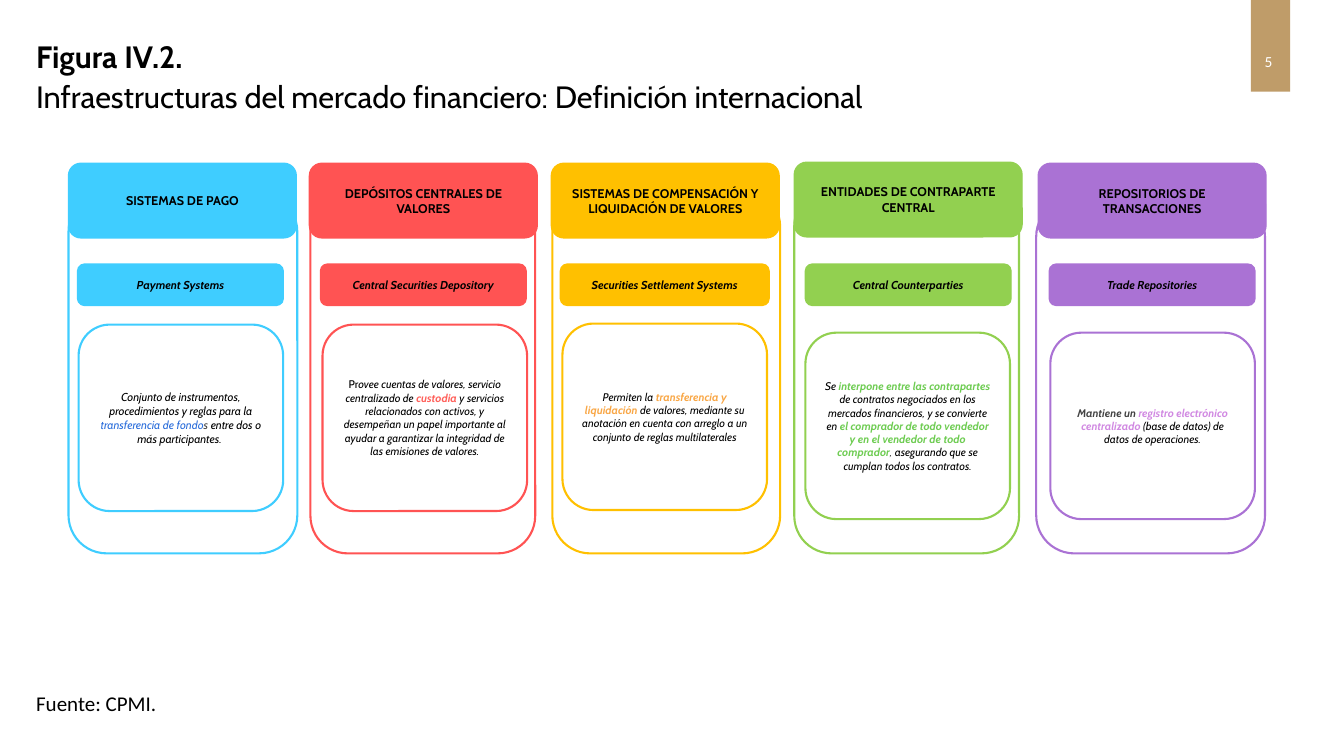
from pptx import Presentation
from pptx.dml.color import RGBColor
from pptx.enum.shapes import MSO_SHAPE
from pptx.enum.text import MSO_ANCHOR, PP_ALIGN
from pptx.util import Inches, Pt

RECT, ROUND = MSO_SHAPE.RECTANGLE, MSO_SHAPE.ROUNDED_RECTANGLE
TOP, MIDDLE = MSO_ANCHOR.TOP, MSO_ANCHOR.MIDDLE
LEFT, CENTER = PP_ALIGN.LEFT, PP_ALIGN.CENTER

BLACK = RGBColor(0x00, 0x00, 0x00)
WHITE = RGBColor(0xFF, 0xFF, 0xFF)
GRAY = RGBColor(0x43, 0x43, 0x43)
GOLD = RGBColor(0xBF, 0x9C, 0x69)
SKY = RGBColor(0x3F, 0xCD, 0xFF)
RED = RGBColor(0xFF, 0x53, 0x53)
AMBER = RGBColor(0xFF, 0xC0, 0x00)
GREEN = RGBColor(0x92, 0xD0, 0x50)
PURPLE = RGBColor(0xAA, 0x72, 0xD4)
# Accents inside the definitions
BLUE = RGBColor(0x2A, 0x6D, 0xDB)
CORAL = RGBColor(0xFF, 0x5F, 0x59)
ORANGE = RGBColor(0xF9, 0xA7, 0x46)
LEAF = RGBColor(0x6E, 0xCC, 0x52)
LILAC = RGBColor(0xD1, 0x89, 0xE2)

# The grid has square cells; one column of the figure spans PITCH cells
CELL = 0.1
WIDE, HIGH = 133.33, 75
START, PITCH = 6.8, 24


class Board:
    """Style and current slide; every box is (column, row, columns, rows)."""

    def __init__(self, deck, head="Cabin", body="Calibri"):
        self.head, self.body = head, body
        self.slide = deck.slides.add_slide(deck.slide_layouts[6])

    def place(self, box):
        return [Inches(cells * CELL) for cells in box]

    def shape(self, kind, box, fill, line=None, width=1):
        item = self.slide.shapes.add_shape(kind, *self.place(box))
        item.shadow.inherit = False
        item.fill.solid()
        item.fill.fore_color.rgb = fill
        if line is None:
            item.line.fill.background()
        else:
            item.line.color.rgb = line
            item.line.width = Pt(width)
        return item

    def text(self, box):
        return self.slide.shapes.add_textbox(*self.place(box))

    def put(self, item, runs, size, font, align=CENTER, anchor=MIDDLE,
            color=BLACK, bold=None, italic=None, more=False):
        """Fill a paragraph; each run is (text, color, bold, italic)."""
        frame = item.text_frame
        frame.word_wrap = True
        frame.vertical_anchor = anchor
        par = frame.add_paragraph() if more else frame.paragraphs[0]
        par.alignment = align
        par.font.size, par.font.name = Pt(size), font
        par.font.bold, par.font.italic = bold, italic
        par.font.color.rgb = color
        for words, tint, heavy, slant in runs:
            run = par.add_run()
            run.text = words
            run.font.bold, run.font.italic = heavy, slant
            if tint is not None:
                run.font.color.rgb = tint
        return par

    def label(self, box, words, color, size, italic=None):
        item = self.shape(ROUND, box, color, color)
        self.put(item, [bare(words)], size, self.head, bold=True, italic=italic)

    def card(self, box, runs, color, size):
        item = self.shape(ROUND, box, WHITE, color, 1.5)
        self.put(item, runs, size, self.head)


def bare(words):
    return words, None, None, None


def plain(words, color=BLACK):
    return words, color, None, True


def strong(words, color):
    return words, color, True, True


# Colour, title, English name, definition, its size, then in cells:
# frame top and width, title shift and top, name shift and width, card shift and top
COLUMNS = [
    (SKY, "SISTEMAS DE PAGO", "Payment Systems",
     [plain("Conjunto de instrumentos, procedimientos y reglas para la "),
      plain("transferencia de fondo", BLUE), plain("s ", GRAY),
      plain("entre dos o más participantes. ")],
     8.2, (19.2, 22.7), (0, 16.2), (0.9, 20.4), (1, 32.2)),
    (RED, "DEPÓSITOS CENTRALES DE VALORES", "Central Securities Depository",
     [bare("Pr"), plain("ovee cuentas de valores, servicio centralizado de "),
      strong("custodia ", CORAL),
      plain("y servicios relacionados con activos, y desempeñan un papel importante "
            "al ayudar a garantizar la integridad de las emisiones de valores.")],
     7.9, (18.7, 22.3), (-0.1, 16.2), (1, 20.4), (1.2, 32.2)),
    (AMBER, "SISTEMAS DE COMPENSACIÓN Y LIQUIDACIÓN DE VALORES",
     "Securities Settlement Systems",
     [plain("Permiten la "), strong("transferencia y liquidación ", ORANGE),
      plain("de valores, mediante su anotación en cuenta con arreglo a un "
            "conjunto de reglas multilaterales")],
     7.9, (18.7, 22.6), (-0.1, 16.2), (0.8, 20.7), (1, 32.1)),
    (GREEN, "ENTIDADES DE CONTRAPARTE CENTRAL", "Central Counterparties",
     [plain("Se"), strong(" interpone entre las contrapartes ", LEAF),
      plain("de contratos negociados en los mercados financieros, y se convierte en "),
      strong("el comprador de todo vendedor y en el vendedor de todo comprador", LEAF),
      plain(", ", GRAY), plain("asegurando que se cumplan todos los contratos.")],
     7.9, (18.7, 22.3), (0, 16.1), (1.1, 20.4), (1.1, 33)),
    (PURPLE, "REPOSITORIOS DE TRANSACCIONES", "Trade Repositories",
     [strong("Mantiene un", GRAY),
      strong(" registro electrónico centralizado ", LILAC),
      plain("(base de datos) de datos de operaciones.")],
     7.9, (19.7, 22.7), (0.2, 16.2), (1.3, 20.4), (1.4, 33)),
]
FLOOR = 54.9


def main():
    deck = Presentation()
    deck.slide_width, deck.slide_height = Inches(WIDE * CELL), Inches(HIGH * CELL)
    board = Board(deck)

    # Page tab
    board.shape(RECT, (124.1, 0, 3.9, 9.1), GOLD)
    board.put(board.text((122, 4.7, 7.7, 3.7)), [bare("5")], 11, board.body,
              anchor=TOP, color=WHITE)

    # Heading
    title = board.text((2.6, 4.3, 129.8, 7.9))
    first = board.put(title, [bare("Figura IV.2.")], 22, board.head, LEFT, TOP,
                      bold=True)
    second = board.put(
        title,
        [bare("Infraestructuras del mercado financiero: Definición internacional")],
        22, board.head, LEFT, TOP, more=True)
    first.line_spacing = second.line_spacing = 0.7
    second.space_before = Pt(10)

    # Source
    board.put(board.text((2.6, 68, 16.5, 3.5)), [bare("Fuente: CPMI.")], 15,
              board.body, LEFT, TOP)

    # Five columns: frame, title, English name, definition
    for i, (color, name, term, runs, size, frame, head, tag, card) in enumerate(COLUMNS):
        left = START + PITCH * i
        board.shape(ROUND, (left, frame[0], frame[1], FLOOR - frame[0]),
                    WHITE, color, 1.5)
        board.label((left + head[0], head[1], 22.6, 7.4), name, color, 9)
        board.label((left + tag[0], 26.2, tag[1], 4.1), term, color, 8.2, True)
        board.card((left + card[0], card[1], 20.3, 18.5), runs, color, size)

    deck.save("out.pptx")


if __name__ == "__main__":
    main()
